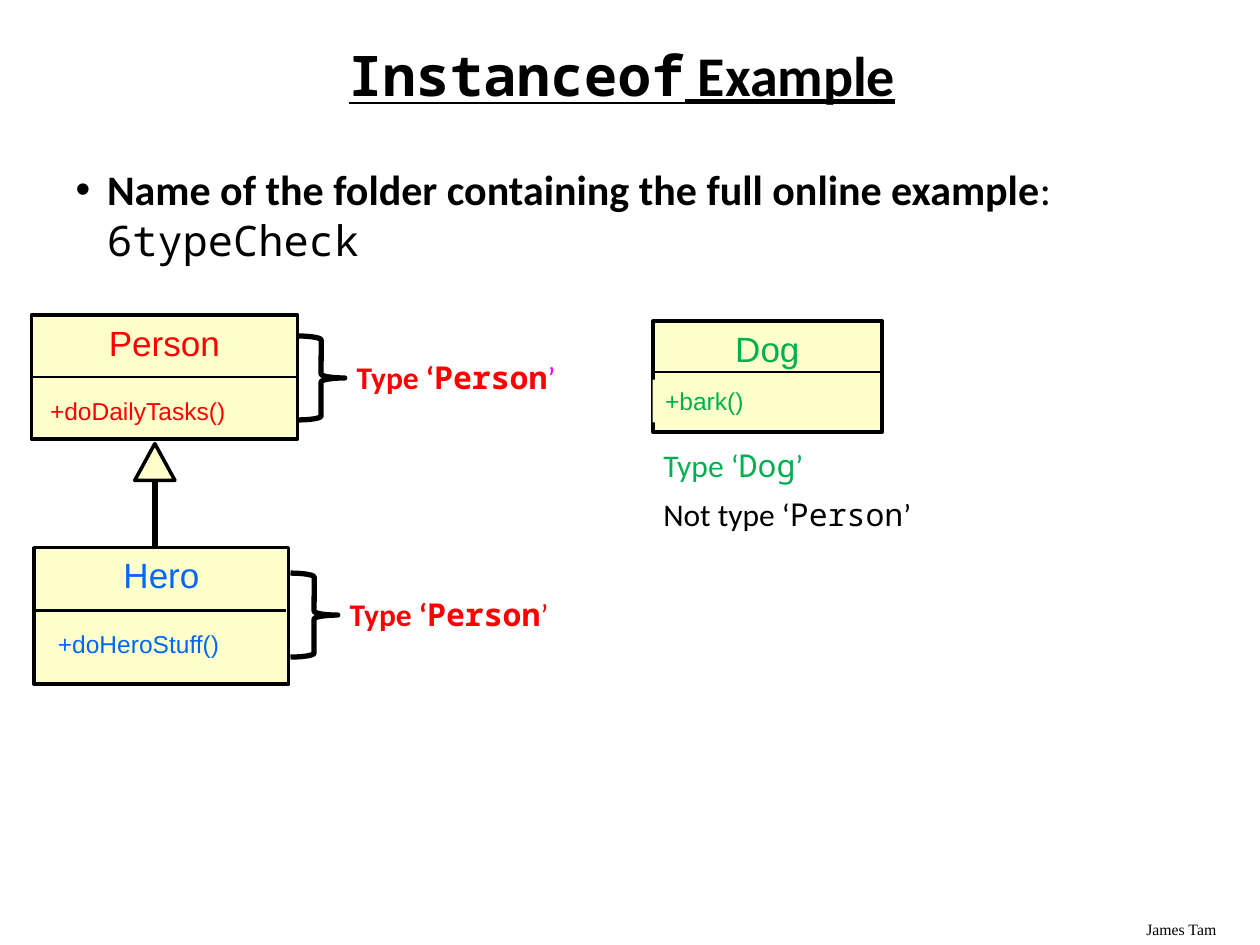
from lxml import etree
from pptx import Presentation
from pptx.dml.color import RGBColor
from pptx.enum.shapes import MSO_CONNECTOR, MSO_SHAPE
from pptx.enum.text import MSO_ANCHOR, MSO_AUTO_SIZE, PP_ALIGN
from pptx.oxml.ns import qn
from pptx.util import Pt

RECTANGLE = MSO_SHAPE.RECTANGLE
TRIANGLE = MSO_SHAPE.ISOSCELES_TRIANGLE
BRACE = MSO_SHAPE.RIGHT_BRACE
STRAIGHT = MSO_CONNECTOR.STRAIGHT
TOP, MIDDLE = MSO_ANCHOR.TOP, MSO_ANCHOR.MIDDLE
LEFT, CENTER = PP_ALIGN.LEFT, PP_ALIGN.CENTER
NO_AUTOFIT = MSO_AUTO_SIZE.NONE
LEFT_SIDE, RIGHT_SIDE = 1, 3

BLACK = RGBColor(0x00, 0x00, 0x00)
CREAM = RGBColor(0xFF, 0xFF, 0xCC)
RED = RGBColor(0xFF, 0x00, 0x00)
MAGENTA = RGBColor(0xFF, 0x00, 0xFF)
BLUE = RGBColor(0x00, 0x66, 0xFF)
GREEN = RGBColor(0x00, 0xB0, 0x50)

SANS, TEXT, CODE, SERIF = "Arial", "Calibri", "Noto Sans Mono", "Times New Roman"


def place(shape, box):
    shape.left, shape.top, shape.width, shape.height = map(Pt, box)


def add_run(paragraph, text, font, size, color=BLACK, bold=False, underline=None):
    run = paragraph.add_run()
    run.text = text
    run.font.name = font
    run.font.size = Pt(size)
    run.font.color.rgb = color
    run.font.bold = bold
    run.font.underline = underline


def add_text_box(slide, box):
    """Add an empty wrapping text box and return its text frame."""
    text_frame = slide.shapes.add_textbox(*map(Pt, box)).text_frame
    text_frame.word_wrap = True
    return text_frame


def add_shape(slide, kind, box, fill=None, line_width=None):
    shape = slide.shapes.add_shape(kind, *map(Pt, box))
    shape.shadow.inherit = False
    if fill is None:
        shape.fill.background()
    else:
        shape.fill.solid()
        shape.fill.fore_color.rgb = fill
    if line_width is None:
        shape.line.fill.background()
    else:
        shape.line.color.rgb = BLACK
        shape.line.width = Pt(line_width)
    return shape


def add_line(slide, start, end, width):
    line = slide.shapes.add_connector(STRAIGHT, *map(Pt, (*start, *end)))
    line.line.color.rgb = BLACK
    line.line.width = Pt(width)
    etree.SubElement(line._element.spPr, qn("a:effectLst"))
    return line


def add_class(slide, name, method, color, box, divider, method_box):
    """Draw a class box; divider is (left, right, y). Return box and divider line."""
    outline = add_shape(slide, RECTANGLE, box, CREAM, 2)
    left, right, y = divider
    line = add_line(slide, (left, y), (right, y), 1.5)
    method_shape = add_shape(slide, RECTANGLE, method_box, CREAM)
    for shape, text, size, anchor, alignment in (
        (outline, name, 20, TOP, CENTER),
        (method_shape, method, 14, MIDDLE, LEFT),
    ):
        shape.text_frame.vertical_anchor = anchor
        paragraph = shape.text_frame.paragraphs[0]
        paragraph.alignment = alignment
        add_run(paragraph, text, SANS, size, color)
    return outline, line


def add_type_label(paragraph, lead, type_name, color, bold=False, quote_color=None):
    add_run(paragraph, f"{lead} ‘", TEXT, 18, color, bold)
    add_run(paragraph, type_name, CODE, 18, color, bold)
    add_run(paragraph, "’", TEXT, 18, quote_color or color)


def add_braced_type(slide, left, top, quote_color):
    """Draw a brace with the type it stands for on its right."""
    add_shape(slide, BRACE, (left, top, 27, 48), line_width=3)
    text_frame = add_text_box(slide, (left + 26.7, top + 9, 141, 29))
    add_type_label(text_frame.paragraphs[0], "Type", "Person", RED, True, quote_color)


def fill_title(title):
    place(title, (34, 24, 643, 41))
    title.text_frame.auto_size = NO_AUTOFIT
    title.text_frame.vertical_anchor = MIDDLE
    paragraph = title.text_frame.paragraphs[0]
    paragraph.alignment = CENTER
    paragraph.line_spacing = 0.9
    add_run(paragraph, "Instanceof", CODE, 32, bold=True, underline=True)
    add_run(paragraph, " Example", TEXT, 32, bold=True, underline=True)


def fill_body(body):
    place(body, (36, 90, 648, 66))
    body.text_frame.auto_size = NO_AUTOFIT
    paragraph = body.text_frame.paragraphs[0]
    paragraph.space_before = Pt(0)
    properties = paragraph._p.get_or_add_pPr()
    properties.set("marL", str(Pt(18)))
    properties.set("indent", str(Pt(-18)))
    etree.SubElement(properties, qn("a:buFont"), typeface=SANS)
    etree.SubElement(properties, qn("a:buChar"), char="•")
    add_run(paragraph, "Name of the folder containing the full online example",
            TEXT, 24, bold=True)
    add_run(paragraph, ": ", TEXT, 24)
    add_run(paragraph, "6typeCheck", CODE, 24)


def main():
    presentation = Presentation()
    presentation.slide_width, presentation.slide_height = Pt(720), Pt(540)
    slide = presentation.slides.add_slide(presentation.slide_layouts[1])

    # Title, bullet and author
    fill_title(slide.shapes.title)
    fill_body(slide.placeholders[1])
    author = add_text_box(slide, (648, 522, 72, 18))
    add_run(author.paragraphs[0], "James Tam", SERIF, 9)

    # Person, with its divider joined to the middle of both sides
    person, divider = add_class(slide, "Person", "+doDailyTasks()", RED,
                                (18, 180, 152, 71), (18, 170, 215.5),
                                (21.5, 222.5, 132, 24.5))
    divider.begin_connect(person, LEFT_SIDE)
    divider.end_connect(person, RIGHT_SIDE)

    # Hero inherits from Person
    add_shape(slide, TRIANGLE, (77, 253.5, 23, 21), CREAM, 2)
    add_line(slide, (88.5, 274.5), (88.5, 313), 3)
    add_class(slide, "Hero", "+doHeroStuff()", BLUE,
              (19.5, 313, 145.5, 78), (18, 163.5, 349), (26, 355.5, 132, 24.5))

    # Unrelated class Dog
    add_class(slide, "Dog", "+bark()", GREEN,
              (373, 183.5, 131, 63.5), (372, 503, 212.5), (373, 217, 102, 24.5))

    # Types of each class
    add_braced_type(slide, 170, 192, MAGENTA)
    add_braced_type(slide, 166, 327.5, RED)
    dog_types = add_text_box(slide, (372, 251.5, 174, 62))
    add_type_label(dog_types.paragraphs[0], "Type", "Dog", GREEN)
    not_person = dog_types.add_paragraph()
    not_person.space_before = Pt(6)
    add_type_label(not_person, "Not type", "Person", BLACK)

    presentation.save("out.pptx")


if __name__ == "__main__":
    main()
